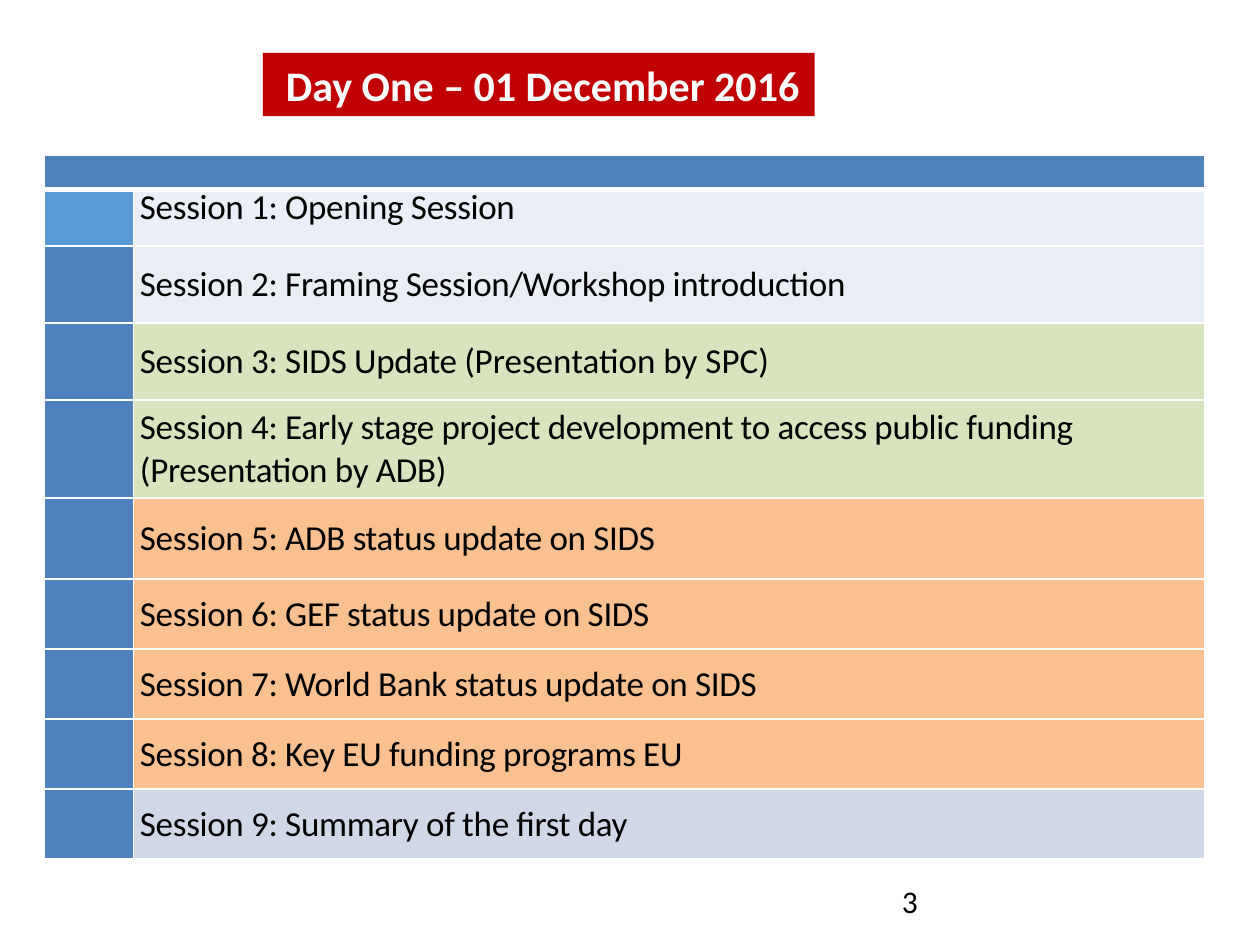
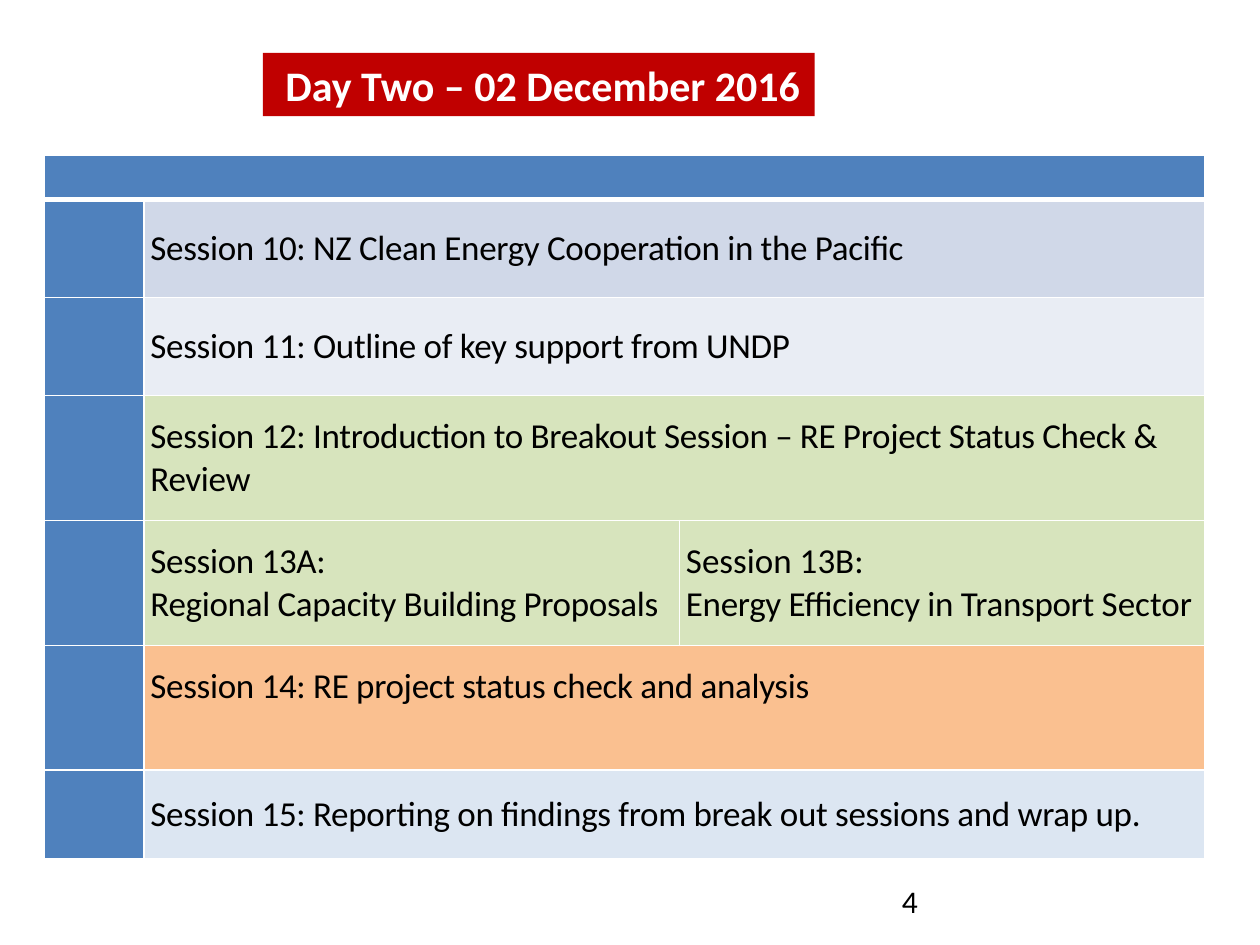
import dataclasses

import pptx
import pptx.dml.color
import pptx.enum.shapes
import pptx.enum.text
import pptx.oxml
import pptx.oxml.ns
import pptx.util

Pt = pptx.util.Pt
rgb = pptx.dml.color.RGBColor.from_string


@dataclasses.dataclass(frozen=True)
class Theme:
    font: str = "Calibri"
    title_size: float = 24
    session_size: float = 20
    number_size: float = 18
    empty_size: float = 8
    tracking: float = -0.2
    text: str = "000000"
    white: str = "FFFFFF"
    banner: str = "C00000"
    blue: str = "4F81BD"
    bright_blue: str = "5B9BD5"
    frost: str = "EAEFF7"
    mist: str = "E9EDF4"
    steel: str = "D0D8E8"
    sky: str = "DCE6F2"
    green: str = "D7E4BD"
    orange: str = "FAC090"


theme = Theme()

# Each row: height, fill, session texts. A "|" ends the tightened letter spacing.
days = [
    {
        "title": "Day One – 01 December 2016",
        "number": "3",
        "columns": [51, 612],
        "header_height": 19.4,
        "rows": [
            (32.4, theme.frost, ["Session 1: Opening Session"]),
            (44, theme.mist, ["Session 2: Framing Session/Workshop introduction"]),
            (44, theme.green, ["Session 3: SIDS Update (|Presentation by SPC)"]),
            (56, theme.green, ["Session 4: Early stage project development to access public funding\n"
                               "(Presentation by ADB)"]),
            (46.4, theme.orange, ["Session 5: ADB status update on SIDS"]),
            (40, theme.orange, ["Session 6: GEF status update on SIDS"]),
            (40, theme.orange, ["Session 7: World Bank status update on SIDS"]),
            (40, theme.orange, ["Session 8: Key EU funding programs EU"]),
            (40, theme.steel, ["Session 9: Summary of the first day"]),
        ],
    },
    {
        "title": "Day Two – 02 December 2016",
        "number": "4",
        "columns": [57, 306, 300],
        "header_height": 25.2,
        "rows": [
            (56, theme.steel, ["Session 10: NZ Clean Energy Cooperation in the Pacific"]),
            (56, theme.mist, ["Session 11: Outline of key support from UNDP"]),
            (71.4, theme.green, ["Session 12: Introduction to Breakout Session – "
                                 "RE Project Status Check & Review"]),
            (71.4, theme.green, ["Session 13A:\nRegional Capacity Building Proposals",
                                 "|Session 13B:\nEnergy Efficiency in Transport |Sector"]),
            (71.4, theme.orange, ["Session 14: RE project status check and analysis"]),
            (50.8, theme.sky, ["Session 15: Reporting on findings from break out sessions and wrap up."]),
        ],
    },
]


def style_cell(cell, fill, top=1, bottom=1):
    """Give an empty cell its white borders, fill and small type."""
    properties = cell._tc.get_or_add_tcPr()
    for side, width in (("L", 1), ("R", 1), ("T", top), ("B", bottom)):
        properties.append(pptx.oxml.parse_xml(
            f'<a:ln{side} {pptx.oxml.ns.nsdecls("a")} w="{Pt(width)}"><a:solidFill>'
            f'<a:srgbClr val="{theme.white}"/></a:solidFill></a:ln{side}>'))
    cell.fill.solid()
    cell.fill.fore_color.rgb = rgb(fill)
    cell.margin_left = cell.margin_right = Pt(3.6)
    cell.margin_top = cell.margin_bottom = 0
    cell.vertical_anchor = pptx.enum.text.MSO_ANCHOR.MIDDLE
    cell.text_frame.paragraphs[0]._p.append(pptx.oxml.parse_xml(
        f'<a:endParaRPr {pptx.oxml.ns.nsdecls("a")} sz="{theme.empty_size * 100}"/>'))


def style_font(font, size, color, bold=False):
    font.name = theme.font
    font.size = Pt(size)
    font.bold = bold
    font.color.rgb = rgb(color)


deck = pptx.Presentation()
deck.slide_width = Pt(720)
deck.slide_height = Pt(540)

for day in days:
    slide = deck.slides.add_slide(deck.slide_layouts[6])

    # Page number
    number = slide.shapes.add_textbox(Pt(508.3), Pt(500.4), Pt(162), Pt(28.8)).text_frame
    number.word_wrap = True
    number.text = day["number"]
    style_font(number.paragraphs[0].font, theme.number_size, theme.text)

    # Agenda
    heights = [day["header_height"]] + [row[0] for row in day["rows"]]
    agenda = slide.shapes.add_table(
        len(heights), len(day["columns"]), Pt(25.4), Pt(88.8),
        Pt(sum(day["columns"])), Pt(sum(heights))).table
    agenda.first_row = agenda.horz_banding = False
    for column, width in zip(agenda.columns, day["columns"]):
        column.width = Pt(width)
    for row, height in zip(agenda.rows, heights):
        row.height = Pt(height)

    last = len(day["columns"]) - 1
    for column in range(last + 1):
        style_cell(agenda.cell(0, column), theme.blue, bottom=3)
    agenda.cell(0, 0).merge(agenda.cell(0, last))

    for index, (_, fill, sessions) in enumerate(day["rows"], start=1):
        opening = sessions[0].startswith("Session 1:")
        for column in range(last + 1):
            marker = theme.bright_blue if opening else theme.blue
            style_cell(agenda.cell(index, column), fill if column else marker,
                       top=3 if index == 1 else 1)
        if len(sessions) < last:
            agenda.cell(index, 1).merge(agenda.cell(index, last))

        for column, session in enumerate(sessions, start=1):
            cell = agenda.cell(index, column)
            if session.startswith("Session 14"):
                cell.margin_bottom = Pt(24)
            for position, line in enumerate(session.split("\n")):
                frame = cell.text_frame
                paragraph = frame.add_paragraph() if position else frame.paragraphs[0]
                style_font(paragraph.font, theme.session_size, theme.text)
                if opening:
                    paragraph.line_spacing = Pt(13)
                for part, words in enumerate(line.split("|")):
                    if words:
                        run = paragraph.add_run()
                        run.text = words
                        style_font(run.font, theme.session_size, theme.text)
                        spacing = 0 if part else theme.tracking
                        run._r.get_or_add_rPr().set("spc", str(round(spacing * 100)))

    # Title banner
    banner = slide.shapes.add_shape(
        pptx.enum.shapes.MSO_SHAPE.RECTANGLE, Pt(150.3), Pt(30.2), Pt(315.2), Pt(36.2))
    banner.shadow.inherit = False
    banner.fill.solid()
    banner.fill.fore_color.rgb = rgb(theme.banner)
    banner.line.fill.background()
    banner.text_frame.word_wrap = False
    banner.text_frame.auto_size = pptx.enum.text.MSO_AUTO_SIZE.SHAPE_TO_FIT_TEXT
    banner.text_frame.text = day["title"]
    title = banner.text_frame.paragraphs[0]
    title.alignment = pptx.enum.text.PP_ALIGN.CENTER
    title._p.get_or_add_pPr().set("marL", str(Pt(4.5)))
    style_font(title.font, theme.title_size, theme.white, bold=True)

deck.save("out.pptx")
